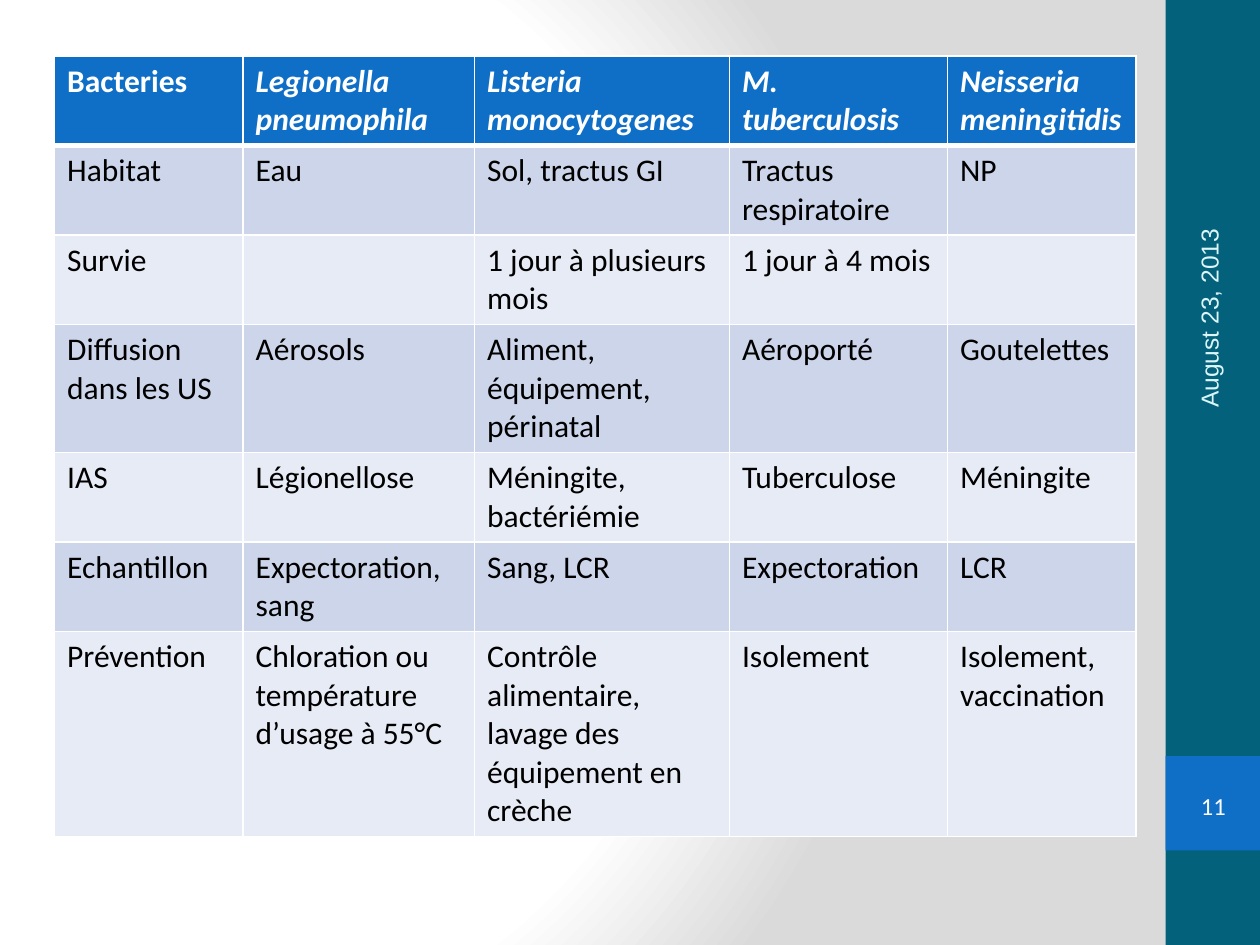
from lxml.etree import SubElement
from pptx import Presentation
from pptx.dml.color import RGBColor
from pptx.enum.shapes import MSO_SHAPE
from pptx.enum.text import MSO_ANCHOR, PP_ALIGN
from pptx.oxml import parse_xml
from pptx.oxml.ns import nsdecls, qn
from pptx.util import Pt

WHITE = RGBColor(0xFF, 0xFF, 0xFF)
BLACK = RGBColor(0, 0, 0)
TEAL = RGBColor(0x04, 0x61, 0x7B)
BLUE = RGBColor(0x0F, 0x6F, 0xC6)
PALE = RGBColor(0xDB, 0xF5, 0xF9)
ODD = RGBColor(0xCC, 0xD5, 0xEA)
EVEN = RGBColor(0xE7, 0xEB, 0xF5)


def write(frame, text, size=18, font="Calibri", color=BLACK,
          bold=False, italic=False, align=PP_ALIGN.LEFT):
    para = frame.paragraphs[0]
    para.alignment = align
    run = para.add_run()
    run.text = text
    run.font.size = Pt(size)
    run.font.name = font
    run.font.color.rgb = color
    run.font.bold = bold
    run.font.italic = italic


def edge(cell, sides):
    props = cell._tc.get_or_add_tcPr()
    for spot, (side, width) in enumerate(sides.items()):
        line = parse_xml(
            f'<a:ln{side} {nsdecls("a")} w="{Pt(width)}"><a:solidFill>'
            f'<a:srgbClr val="{WHITE}"/></a:solidFill></a:ln{side}>')
        props.insert(spot, line)


deck = Presentation()
deck.slide_width = Pt(720)
deck.slide_height = Pt(540)
slide = deck.slides.add_slide(deck.slide_layouts[6])

slide.background.fill.solid()
back = slide.background._cSld.find(qn("p:bg")).find(qn("p:bgPr"))
back.replace(back[0], parse_xml(
    f'<a:gradFill {nsdecls("a")} rotWithShape="1"><a:gsLst>'
    '<a:gs pos="0"><a:srgbClr val="FFFFFF"/></a:gs>'
    '<a:gs pos="75000"><a:srgbClr val="FFFFFF"/></a:gs>'
    '<a:gs pos="100000"><a:srgbClr val="DADADA"/></a:gs></a:gsLst>'
    '<a:path path="circle"><a:fillToRect l="20000" t="50000" '
    'r="100000" b="50000"/></a:path></a:gradFill>'))

for top, tall, color in [(0, 540, TEAL), (432, 54, BLUE)]:
    bar = slide.shapes.add_shape(
        MSO_SHAPE.RECTANGLE, Pt(666), Pt(top), Pt(54), Pt(tall))
    bar.shadow.inherit = False
    bar.fill.solid()
    bar.fill.fore_color.rgb = color
    bar.line.fill.background()

rows = [
    ["Bacteries", "Legionella pneumophila", "Listeria monocytogenes",
     "M. tuberculosis", "Neisseria meningitidis"],
    ["Habitat", "Eau", "Sol, tractus GI", "Tractus respiratoire", "NP"],
    ["Survie", "", "1 jour à plusieurs mois", "1 jour à 4 mois", ""],
    ["Diffusion dans les US", "Aérosols", "Aliment, équipement, périnatal",
     "Aéroporté", "Goutelettes"],
    ["IAS", "Légionellose", "Méningite, bactériémie", "Tuberculose",
     "Méningite"],
    ["Echantillon", "Expectoration, sang", "Sang, LCR", "Expectoration",
     "LCR"],
    ["Prévention", "Chloration ou température d’usage à 55°C",
     "Contrôle alimentaire, lavage des équipement en crèche",
     "Isolement", "Isolement, vaccination"],
]
widths = [107.7, 132.3, 145.7, 124.6, 107.7]
grid = slide.shapes.add_table(
    len(rows), len(widths), Pt(31.2), Pt(31.9), Pt(618), Pt(439.2))
table = grid.table
for col, width in zip(table.columns, widths):
    col.width = Pt(width)
for r, row in enumerate(rows):
    table.rows[r].height = Pt(29.2)
    head = r == 0
    for c, text in enumerate(row):
        cell = table.cell(r, c)
        cell.fill.solid()
        cell.fill.fore_color.rgb = BLUE if head else ODD if r % 2 else EVEN
        edge(cell, {"L": 1, "R": 1, "T": 3 if r == 1 else 1,
                    "B": 3 if head else 1})
        if text:
            write(cell.text_frame, text, color=WHITE if head else BLACK,
                  bold=head, italic=head and c > 0)
grid.height = Pt(439.2)

date = slide.shapes.add_textbox(Pt(594.7), Pt(129.6), Pt(192.2), Pt(28.8))
date.rotation = 270
date.text_frame.word_wrap = True
date.text_frame.vertical_anchor = MSO_ANCHOR.MIDDLE
write(date.text_frame, "August 23, 2013", size=14, font="Arial", color=PALE)

page = slide.shapes.add_shape(
    MSO_SHAPE.DOUBLE_BRACKET, Pt(671.8), Pt(445), Pt(43.2), Pt(31))
page.adjustments[0] = 0.18
page.shadow.inherit = False
page.fill.background()
page.line.fill.background()
frame = page.text_frame
frame.margin_left = frame.margin_right = 0
frame.margin_top = frame.margin_bottom = 0
frame.vertical_anchor = MSO_ANCHOR.MIDDLE
write(frame, "11", size=14, color=WHITE, align=PP_ALIGN.CENTER)

deck.save("out.pptx")
